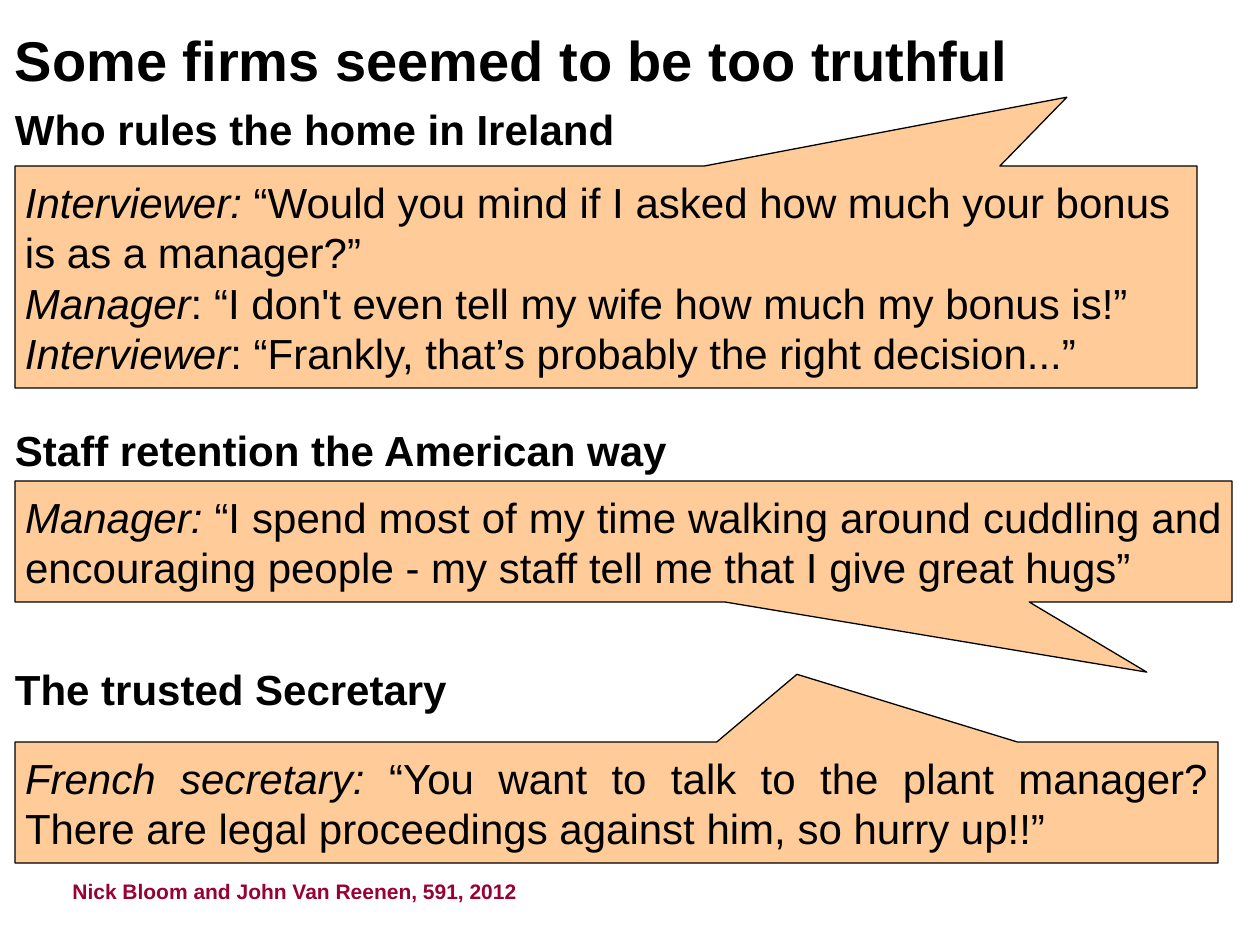
from pptx import Presentation
from pptx import util as u
from pptx.dml.color import RGBColor
from pptx.enum import shapes, text

BLACK = RGBColor(0x00, 0x00, 0x00)
PEACH = RGBColor(0xFF, 0xCC, 0x99)
WINE = RGBColor(0x99, 0x00, 0x33)
PX = 914400 / 126


def px(n):
    return u.Emu(round(n * PX))


def add_run(para, words, size, color=BLACK, bold=False, italic=False):
    run = para.add_run()
    run.text = words
    font = run.font
    font.name, font.size = "Arial", u.Pt(size)
    font.bold, font.italic = bold, italic
    font.color.rgb = color


deck = Presentation()
deck.slide_width, deck.slide_height = px(1260), px(945)
slide = deck.slides.add_slide(deck.slide_layouts[5])

# Source line at the foot
foot = slide.shapes.add_textbox(px(60), px(872), px(474), px(38))
foot.text_frame.word_wrap = False
add_run(foot.text_frame.paragraphs[0],
        "Nick Bloom and John Van Reenen, 591, 2012", 12, WINE, bold=True)

# Speech callouts: top, width, height, pointer, alignment, lines by speaker
LEFT, JUST = text.PP_ALIGN.LEFT, text.PP_ALIGN.JUSTIFY
quotes = [
    (166, 1182, 222, (0.39, -0.81), LEFT, [
        ("Interviewer: ", "“Would you mind if I asked how much your bonus "
                          "is as a manager?”"),
        ("Manager", ": “I don't even tell my wife how much my bonus is!”"),
        ("Interviewer", ": “Frankly, that’s probably the right decision...”"),
    ]),
    (481, 1217, 121, (0.43, 1.08), JUST, [
        ("Manager: ", "“I spend most of my time walking around cuddling and "
                      "encouraging people - my staff tell me that I give "
                      "great hugs”"),
    ]),
    (742, 1203, 121, (0.15, -1.06), JUST, [
        ("French secretary: ", "“You want to talk to the plant manager? There "
                               "are legal proceedings against him, so hurry "
                               "up!!”"),
    ]),
]
for top, width, height, tip, align, lines in quotes:
    box = slide.shapes.add_shape(shapes.MSO_SHAPE.RECTANGULAR_CALLOUT,
                                 px(15), px(top), px(width), px(height))
    box.adjustments[0], box.adjustments[1] = tip
    box.shadow.inherit = False
    box.fill.solid()
    box.fill.fore_color.rgb = PEACH
    box.line.color.rgb = BLACK
    box.line.width = u.Pt(0.75)
    frame = box.text_frame
    frame.word_wrap = True
    frame.vertical_anchor = text.MSO_ANCHOR.MIDDLE
    frame.margin_left = frame.margin_right = px(10)
    frame.margin_top = frame.margin_bottom = px(10)
    for i, (who, said) in enumerate(lines):
        para = frame.paragraphs[0] if i == 0 else frame.add_paragraph()
        para.alignment = align
        add_run(para, who, 24, italic=True)
        add_run(para, said, 24)

# Title and section headings
title = slide.shapes.title
title.left, title.top, title.width, title.height = (
    px(15), px(15), px(1270), px(81))
heads = [(title, "Some firms seemed to be too truthful", 32)]
for top, words in [(93, "Who rules the home in Ireland"),
                   (413, "Staff retention the American way"),
                   (653, "The trusted Secretary")]:
    box = slide.shapes.add_textbox(px(15), px(top), px(1245), px(63))
    heads.append((box, words, 24))
for box, words, size in heads:
    frame = box.text_frame
    frame.word_wrap = True
    frame.auto_size = text.MSO_AUTO_SIZE.NONE
    frame.vertical_anchor = text.MSO_ANCHOR.TOP
    frame.margin_left, frame.margin_top = 0, px(11)
    frame.margin_bottom = 0
    frame.paragraphs[0].alignment = LEFT
    add_run(frame.paragraphs[0], words, size, bold=True)

deck.save("out.pptx")
